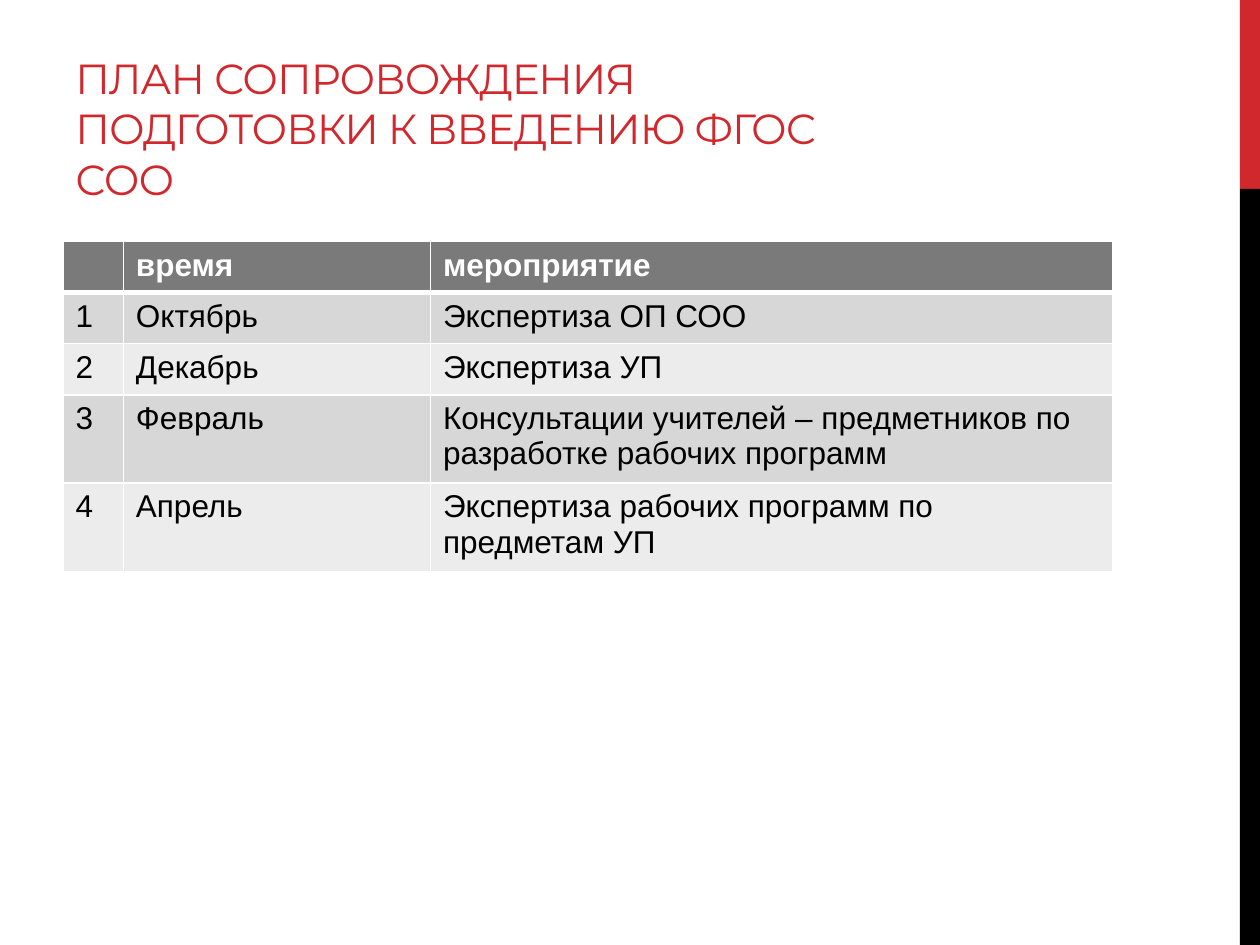
from lxml import etree
from pptx import Presentation
from pptx.dml.color import RGBColor
from pptx.enum.shapes import MSO_SHAPE
from pptx.enum.text import MSO_ANCHOR
from pptx.oxml.ns import qn
from pptx.util import Pt

RECTANGLE = MSO_SHAPE.RECTANGLE
BOTTOM = MSO_ANCHOR.BOTTOM

RED = RGBColor(0xD1, 0x28, 0x2E)
BLACK = RGBColor(0, 0, 0)
WHITE = RGBColor(0xFF, 0xFF, 0xFF)
HEADER_GRAY = RGBColor(0x7A, 0x7A, 0x7A)
BAND_GRAYS = (RGBColor(0xD7, 0xD7, 0xD7), RGBColor(0xEC, 0xEC, 0xEC))

SLIDE_WIDTH, SLIDE_HEIGHT = 720, 540
STRIPE_WIDTH = 11.5
TITLE = "ПЛАН СОПРОВОЖДЕНИЯ ПОДГОТОВКИ К ВВЕДЕНИЮ ФГОС СОО"
COLUMN_WIDTHS = (34.5, 175.5, 390)
ROW_HEIGHTS = (29.2, 29.2, 29.2, 47.3, 47.3)
HEADER = ("", "время", "мероприятие")
EVENTS = (
    ("Октябрь", "Экспертиза ОП СОО"),
    ("Декабрь", "Экспертиза УП"),
    ("Февраль", "Консультации учителей – предметников по разработке рабочих программ"),
    ("Апрель", "Экспертиза рабочих программ по предметам УП"),
)


def add_side_stripe(slide, left, top, width, height):
    red_height = height / 5
    parts = ((top, red_height, RED), (top + red_height, height - red_height, BLACK))
    for part_top, part_height, color in parts:
        shape = slide.shapes.add_shape(
            RECTANGLE, Pt(left), Pt(part_top), Pt(width), Pt(part_height))
        shape.shadow.inherit = False
        shape.fill.solid()
        shape.fill.fore_color.rgb = color
        shape.line.fill.background()


def add_title(slide, left, top, width, height):
    box = slide.shapes.add_textbox(Pt(left), Pt(top), Pt(width), Pt(height))
    frame = box.text_frame
    frame.word_wrap = True
    frame.vertical_anchor = BOTTOM
    paragraph = frame.paragraphs[0]
    run = paragraph.add_run()
    run.text = TITLE
    paragraph.font.name = "Montserrat"
    paragraph.font.size = Pt(24)
    paragraph.font.color.rgb = RED
    run.font._element.set("spc", "-60")


def set_borders(cell, bottom_width, top_width):
    properties = cell._tc.get_or_add_tcPr()
    widths = {"a:lnL": 1, "a:lnR": 1, "a:lnT": top_width, "a:lnB": bottom_width}
    for position, (tag, width) in enumerate(widths.items()):
        line = etree.Element(qn(tag), w=str(Pt(width)))
        fill = etree.SubElement(line, qn("a:solidFill"))
        etree.SubElement(fill, qn("a:srgbClr"), val=str(WHITE))
        properties.insert(position, line)


def add_schedule(slide, left, top, width, height):
    rows = [HEADER] + [(str(number), *event) for number, event in enumerate(EVENTS, 1)]
    table = slide.shapes.add_table(
        len(rows), len(HEADER), Pt(left), Pt(top), Pt(width), Pt(height)).table
    for column, column_width in zip(table.columns, COLUMN_WIDTHS):
        column.width = Pt(column_width)
    for row_index, (texts, row_height) in enumerate(zip(rows, ROW_HEIGHTS)):
        is_header = row_index == 0
        table.rows[row_index].height = Pt(row_height)
        for column_index, text in enumerate(texts):
            cell = table.cell(row_index, column_index)
            cell.text = text
            cell.fill.solid()
            cell.fill.fore_color.rgb = (
                HEADER_GRAY if is_header else BAND_GRAYS[(row_index - 1) % 2])
            set_borders(cell, 3 if is_header else 1, 3 if row_index == 1 else 1)
            font = cell.text_frame.paragraphs[0].font
            font.name = "Arial"
            font.size = Pt(18)
            font.bold = is_header
            font.color.rgb = WHITE if is_header else BLACK


def main():
    presentation = Presentation()
    presentation.slide_width = Pt(SLIDE_WIDTH)
    presentation.slide_height = Pt(SLIDE_HEIGHT)
    slide = presentation.slides.add_slide(presentation.slide_layouts[6])
    add_side_stripe(slide, SLIDE_WIDTH - STRIPE_WIDTH, 0, STRIPE_WIDTH, SLIDE_HEIGHT)
    add_title(slide, 36, 12, 456, 108)
    add_schedule(slide, 36, 138, sum(COLUMN_WIDTHS), sum(ROW_HEIGHTS))
    presentation.save("out.pptx")


if __name__ == "__main__":
    main()
